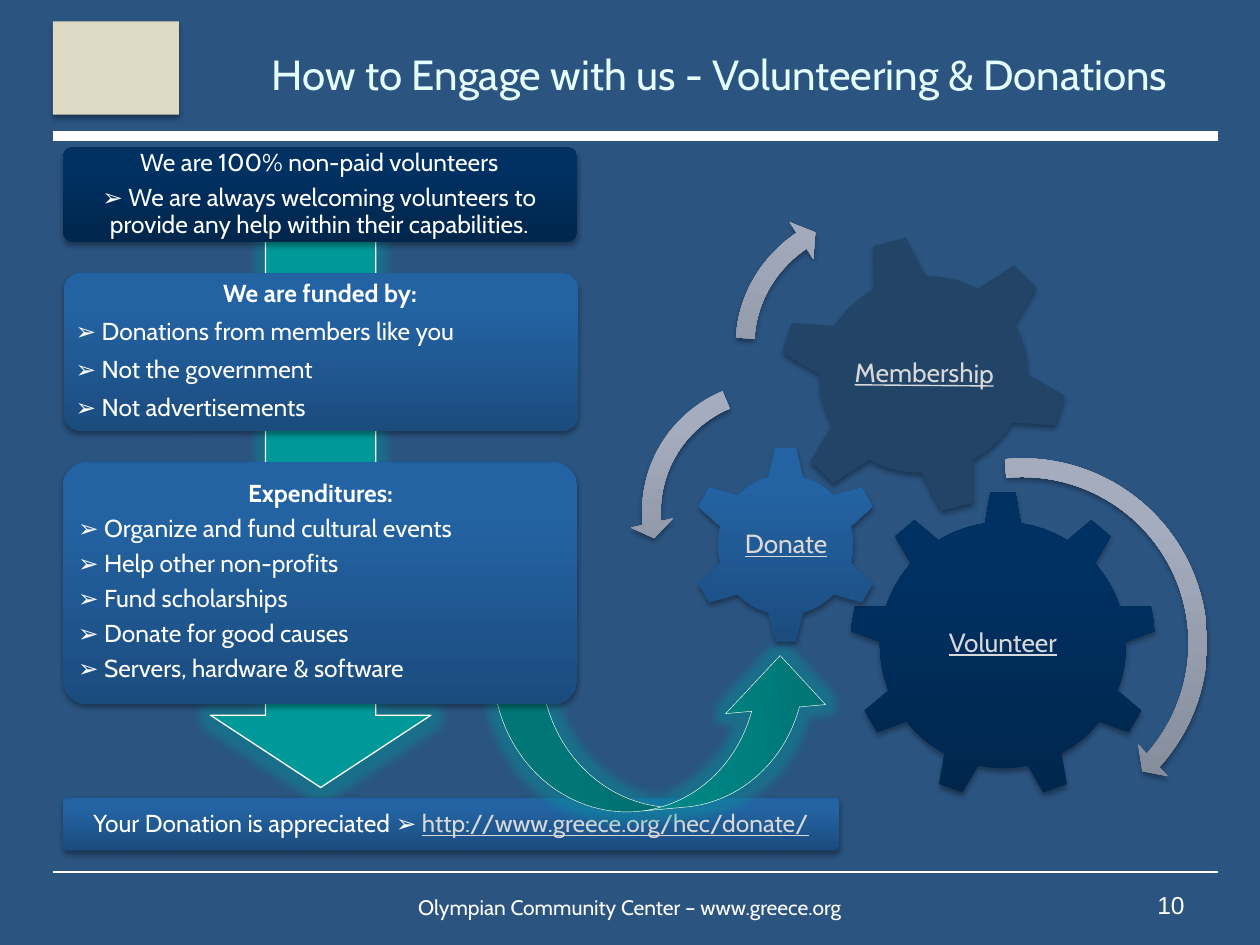
from pptx import Presentation
from pptx.dml.color import RGBColor
from pptx.enum.shapes import MSO_CONNECTOR, MSO_SHAPE
from pptx.enum.text import MSO_ANCHOR, PP_ALIGN
from pptx.oxml import parse_xml
from pptx.oxml.ns import nsdecls, qn
from pptx.util import Inches, Pt

WHITE, LINK, TEAL = "FFFFFF", "D8D8D8", "009999"
BLUE = ("1B4C7E", "2363A3")
NAVY = ("00264C", "003163")
SILVER = ("7E8592", "A4ACBE")
GREEN = ("007272", "009494")
CENTER, LEFT, RIGHT = PP_ALIGN.CENTER, PP_ALIGN.LEFT, PP_ALIGN.RIGHT
MIDDLE, BOTTOM = MSO_ANCHOR.MIDDLE, MSO_ANCHOR.BOTTOM

SHADOW = (
    f'<a:outerShdw {nsdecls("a")} blurRad="39370" dist="22860" dir="5400000" rotWithShape="0">'
    '<a:srgbClr val="000000"><a:alpha val="35000"/></a:srgbClr></a:outerShdw>'
)
GLOW = (
    f'<a:glow {nsdecls("a")} rad="139700">'
    f'<a:srgbClr val="{TEAL}"><a:alpha val="40000"/></a:srgbClr></a:glow>'
)


def color(value):
    return RGBColor.from_string(value)


class Board:
    font = "Cabin"
    size = 14
    space_after = 4.9

    def __init__(self, slide):
        self.slide = slide

    def rule(self, y, width):
        line = self.slide.shapes.add_connector(
            MSO_CONNECTOR.STRAIGHT, Inches(0.42), Inches(y), Inches(9.67), Inches(y))
        line.line.color.rgb = color(WHITE)
        line.line.width = Pt(width)
        line._element.spPr.append(parse_xml(f'<a:effectLst {nsdecls("a")}/>'))

    def shape(self, kind, box, fill, adjust=(), rotation=0, outline=None, effect=SHADOW):
        shape = self.slide.shapes.add_shape(kind, *map(Inches, box))
        shape.rotation = rotation
        for index, value in enumerate(adjust):
            shape.adjustments[index] = value
        if isinstance(fill, tuple):
            shape.fill.gradient()
            shape.fill.gradient_angle = 90
            for stop, value, position in zip(shape.fill.gradient_stops, fill, (0, 0.8)):
                stop.color.rgb = color(value)
                stop.position = position
        else:
            shape.fill.solid()
            shape.fill.fore_color.rgb = color(fill)
        if outline:
            shape.line.color.rgb = color(WHITE)
            shape.line.width = Pt(outline)
        else:
            shape.line.fill.background()
        shape.shadow.inherit = False
        if effect:
            shape._element.spPr.find(qn("a:effectLst")).append(parse_xml(effect))

    def text(self, box, lines, size=None, ink=WHITE, font=None, align=CENTER, anchor=MIDDLE,
             inset=None, spacing=None, after=0, underline=None, rotation=0):
        label = self.slide.shapes.add_textbox(*map(Inches, box))
        label.rotation = rotation
        frame = label.text_frame
        frame.word_wrap = True
        frame.vertical_anchor = anchor
        if inset is not None:
            frame.margin_left = frame.margin_right = Inches(inset)
            frame.margin_top = frame.margin_bottom = Inches(inset)
        for index, line in enumerate(lines):
            paragraph = frame.paragraphs[0] if index == 0 else frame.add_paragraph()
            paragraph.text = line
            paragraph.alignment = align
            paragraph.space_after = Pt(after)
            if spacing:
                paragraph.line_spacing = spacing
            paragraph.font.name = font or self.font
            paragraph.font.size = Pt(size or self.size)
            paragraph.font.color.rgb = color(ink)
            paragraph.font.underline = underline
        return frame

    def card(self, box, fill, text_box, lines, adjust=0.1):
        self.shape(MSO_SHAPE.ROUNDED_RECTANGLE, box, fill, [adjust])
        return self.text(text_box, lines, inset=0.06, spacing=0.9, after=self.space_after)

    def list_card(self, box, text_box, heading, items, item_spacing):
        frame = self.card(box, BLUE, text_box, [heading] + [f"➢ {item}" for item in items])
        frame.paragraphs[0].font.bold = True
        for item in frame.paragraphs[1:]:
            item.alignment = LEFT
            item.line_spacing = item_spacing

    def gear(self, kind, box, fill, text_box, name, rotation=0, text_rotation=0):
        self.shape(kind, box, fill, rotation=rotation)
        self.text(text_box, [name], size=15, ink=LINK, inset=0.02, spacing=0.9,
                  underline=True, rotation=text_rotation)


def main():
    deck = Presentation()
    deck.slide_width, deck.slide_height = Inches(10), Inches(7.5)
    slide = deck.slides.add_slide(deck.slide_layouts[6])
    slide.background.fill.solid()
    slide.background.fill.fore_color.rgb = color("2B5481")
    board = Board(slide)

    board.rule(1.08, 6)
    board.rule(6.92, 0.75)
    board.shape(MSO_SHAPE.RECTANGLE, (0.42, 0.17, 1, 0.74), "DDD9C3")
    board.shape(MSO_SHAPE.DOWN_ARROW, (1.67, 1.67, 1.75, 4.58), TEAL, (0.5, 0.328),
                outline=0.75, effect=GLOW)
    board.text((1.75, 0.17, 7.92, 0.83), ["How to Engage with us - Volunteering & Donations"],
               size=24, ink="E5FFFF")
    board.text((7.17, 6.83, 2.33, 0.52), ["10"], font="Arial", align=RIGHT, anchor=BOTTOM)

    board.list_card((0.51, 2.17, 4.08, 1.25), (0.54, 2.2, 4, 1.18), "We are funded by:",
                    ["Donations from members like you", "Not the government",
                     "Not advertisements"], 1)

    board.gear(MSO_SHAPE.GEAR_9, (6.74, 3.9, 2.44, 2.44), NAVY,
               (7.23, 4.48, 1.46, 1.26), "Volunteer")
    board.gear(MSO_SHAPE.GEAR_6, (5.47, 3.54, 1.53, 1.57), BLUE,
               (5.86, 3.93, 0.76, 0.79), "Donate")
    board.gear(MSO_SHAPE.GEAR_6, (6.17, 1.86, 2.32, 2.22), "224567",
               (6.69, 2.34, 1.29, 1.26), "Membership", rotation=345.5, text_rotation=0.5)

    board.shape(MSO_SHAPE.CIRCULAR_ARROW, (6.55, 3.54, 3.13, 3.13), SILVER,
                (0.047, 2.99, 25.131, 158.679, 0.055))
    board.shape(MSO_SHAPE.LEFT_CIRCULAR_ARROW, (5, 2.93, 2.27, 2.27), SILVER,
                (0.065, 4.3, 104.891, 148.378, 0.075))
    board.shape(MSO_SHAPE.CIRCULAR_ARROW, (5.74, 1.54, 2.64, 2.45), SILVER,
                (0.06, 3.941, 133.138, 105.082, 0.07), rotation=8.9)

    appeal = board.card((0.5, 6.33, 6.16, 0.42), BLUE, (0.51, 6.35, 6.14, 0.39),
                        ["Your Donation is appreciated ➢ "])
    address = appeal.paragraphs[0].add_run()
    address.text = "http://www.greece.org/hec/donate/"
    address.font.color.rgb = color(LINK)
    address.font.underline = True

    board.card((0.5, 1.17, 4.08, 0.75), NAVY, (0.52, 1.19, 4.03, 0.71),
               ["We are 100% non-paid volunteers",
                "➢ We are always welcoming volunteers to provide any help "
                "within their capabilities."])
    board.shape(MSO_SHAPE.CURVED_RIGHT_ARROW, (4.74, 4.51, 1.13, 2.68), GREEN,
                (0.337, 0.704, 0.372), rotation=264.8, outline=0.25, effect=GLOW)
    board.list_card((0.5, 3.67, 4.08, 1.92), (0.56, 3.72, 3.97, 1.8), "Expenditures:",
                    ["Organize and fund cultural events", "Help other non-profits",
                     "Fund scholarships", "Donate for good causes",
                     "Servers, hardware & software"], 0.9)
    board.text((3, 6.83, 4, 0.52), ["Olympian Community Center – www.greece.org"],
               size=12, anchor=BOTTOM)

    deck.save("out.pptx")


if __name__ == "__main__":
    main()
